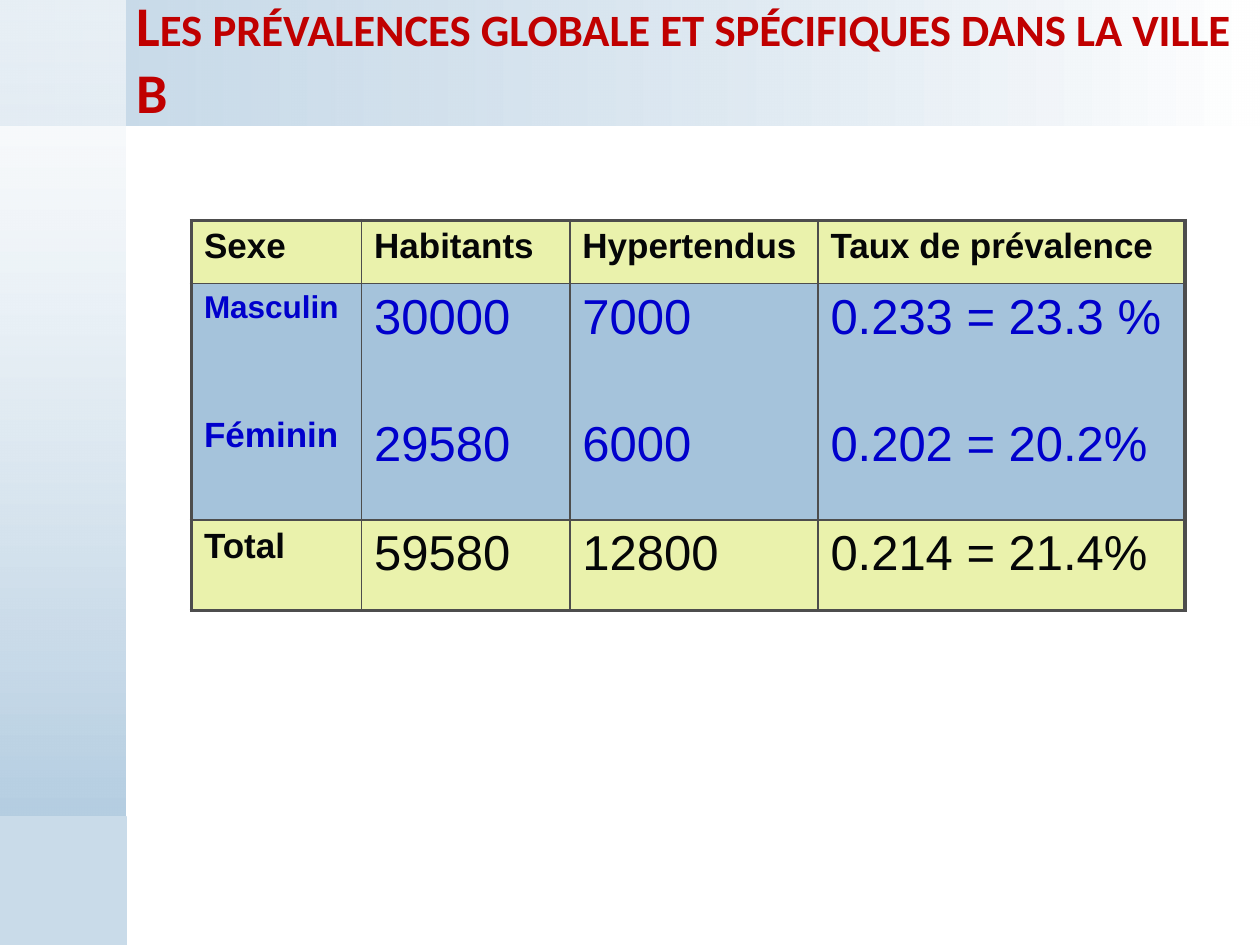
import lxml.etree
import pptx
import pptx.dml.color
import pptx.enum.shapes
import pptx.enum.text
import pptx.oxml.ns
import pptx.util

Pt = pptx.util.Pt
qn = pptx.oxml.ns.qn

BLACK, BLUE, RED = "050607", "0000CC", "C00000"
GREEN, SKY, PALE, GREY = "EAF2AC", "A5C3DB", "C9DBE9", "4D4D4D"
LABEL = {"name": "Arial", "size": Pt(20), "bold": True}
SMALL_LABEL = {**LABEL, "size": Pt(18)}
NUMBER = {"name": "Arial", "size": Pt(28), "bold": False}


def rgb(value):
    """Turn a hex string into a colour."""
    return pptx.dml.color.RGBColor.from_string(value)


def format_font(font, values, color):
    """Apply a dict of font values and a colour."""
    for name, value in values.items():
        setattr(font, name, value)
    font.color.rgb = rgb(color)


def add_rectangle(page, box):
    """Add a rectangle without shadow or outline."""
    kind = pptx.enum.shapes.MSO_SHAPE.RECTANGLE
    shape = page.shapes.add_shape(kind, *map(Pt, box))
    shape.shadow.inherit = False
    shape.line.fill.background()
    return shape


def add_gradient_band(page, box, stops, angle):
    """Add a band whose stops are pairs of colour and opacity in percent."""
    shape = add_rectangle(page, box)
    shape.fill.gradient()
    shape.fill.gradient_angle = angle
    for stop, (color, opacity) in zip(shape.fill.gradient_stops, stops):
        stop.color.rgb = rgb(color)
    colors = shape.fill._xPr.iter(qn("a:srgbClr"))
    for element, (color, opacity) in zip(colors, stops):
        lxml.etree.SubElement(element, qn("a:alpha"), val=str(opacity * 1000))


def add_corner(page, box):
    """Add the plain square at the foot of the side band."""
    shape = add_rectangle(page, box)
    shape.fill.solid()
    shape.fill.fore_color.rgb = rgb(PALE)
    shape.line.color.rgb = rgb(PALE)
    shape.line.width = Pt(0.75)


def place_title(page, box, text):
    """Fill the title placeholder and lift it above the bands."""
    title = page.shapes.title
    title.left, title.top, title.width, title.height = map(Pt, box)
    page.shapes._spTree.append(title._element)
    frame = title.text_frame
    frame.word_wrap = True
    frame.auto_size = pptx.enum.text.MSO_AUTO_SIZE.NONE
    frame.vertical_anchor = pptx.enum.text.MSO_ANCHOR.MIDDLE
    para = frame.paragraphs[0]
    para.alignment = pptx.enum.text.PP_ALIGN.LEFT
    span = para.add_run()
    span.text = text
    format_font(span.font, {"name": "Calibri", "size": Pt(32), "bold": True}, RED)
    span.font._element.set("cap", "small")


def set_borders(cell, widths):
    """Draw the cell borders from a dict of side and width."""
    properties = cell._tc.get_or_add_tcPr()
    for side, width in widths.items():
        line = lxml.etree.SubElement(properties, qn(f"a:ln{side}"), w=str(Pt(width)))
        fill = lxml.etree.SubElement(line, qn("a:solidFill"))
        lxml.etree.SubElement(fill, qn("a:srgbClr"), val=GREY)


def fill_cell(cell, lines, gap, color, background):
    """Write the lines of a cell, parted by a gap, on a background."""
    cell.fill.solid()
    cell.fill.fore_color.rgb = rgb(background)
    frame = cell.text_frame
    for index, (text, values) in enumerate(lines):
        para = frame.add_paragraph() if index else frame.paragraphs[0]
        if index:
            para.space_before = Pt(gap)
        span = para.add_run()
        span.text = text
        format_font(span.font, values, color)


def add_prevalence_table(page, box):
    """Add the table of prevalence by sex."""
    headers = ["Sexe", "Habitants", "Hypertendus", "Taux de prévalence"]
    men = ["30000", "7000", "0.233 = 23.3 %"]
    women = ["29580", "6000", "0.202 = 20.2%"]
    totals = ["59580", "12800", "0.214 = 21.4%"]
    sexes = [("Masculin", SMALL_LABEL), ("Féminin", LABEL)]
    rows = [
        ([[(text, LABEL)] for text in headers], BLACK, GREEN),
        ([sexes] + [[(text, NUMBER) for text in pair] for pair in zip(men, women)],
         BLUE, SKY),
        ([[("Total", LABEL)]] + [[(text, NUMBER)] for text in totals], BLACK, GREEN),
    ]
    widths, heights = [97.2, 119, 141.8, 209.8], [36, 135.2, 51.8]
    table = page.shapes.add_table(len(rows), len(widths), *map(Pt, box)).table
    table.first_row = table.horz_banding = False
    for column, width in zip(table.columns, widths):
        column.width = Pt(width)
    for row, height in zip(table.rows, heights):
        row.height = Pt(height)
    for y, (cells, color, background) in enumerate(rows):
        for x, lines in enumerate(cells):
            cell = table.cell(y, x)
            outer = {"L": x == 0, "R": x == len(widths) - 1,
                     "T": y == 0, "B": y == len(rows) - 1}
            set_borders(cell, {side: 2.25 if edge else 1 for side, edge in outer.items()})
            gap = 52 if x == 0 else 41.5
            fill_cell(cell, lines, gap, color, background)


def build_slide(page):
    """Place the bands, title, table and corner."""
    add_gradient_band(page, (0, 0, 720, 72), [(SKY, 62), ("FFFFFF", 100)], 0)
    add_gradient_band(page, (0, 0, 72, 540), [("FFFFFF", 59), (SKY, 100)], 270)
    place_title(page, (70.6, 0, 649.4, 65.5),
                "Les prévalences globale et spécifiques dans la ville B")
    add_prevalence_table(page, (109.4, 126, 567.8, 223))
    add_corner(page, (0, 466.6, 72, 73.4))


def main():
    """Build and save the deck."""
    deck = pptx.Presentation()
    deck.slide_width, deck.slide_height = Pt(720), Pt(540)
    build_slide(deck.slides.add_slide(deck.slide_layouts[5]))
    deck.save("out.pptx")


if __name__ == "__main__":
    main()
